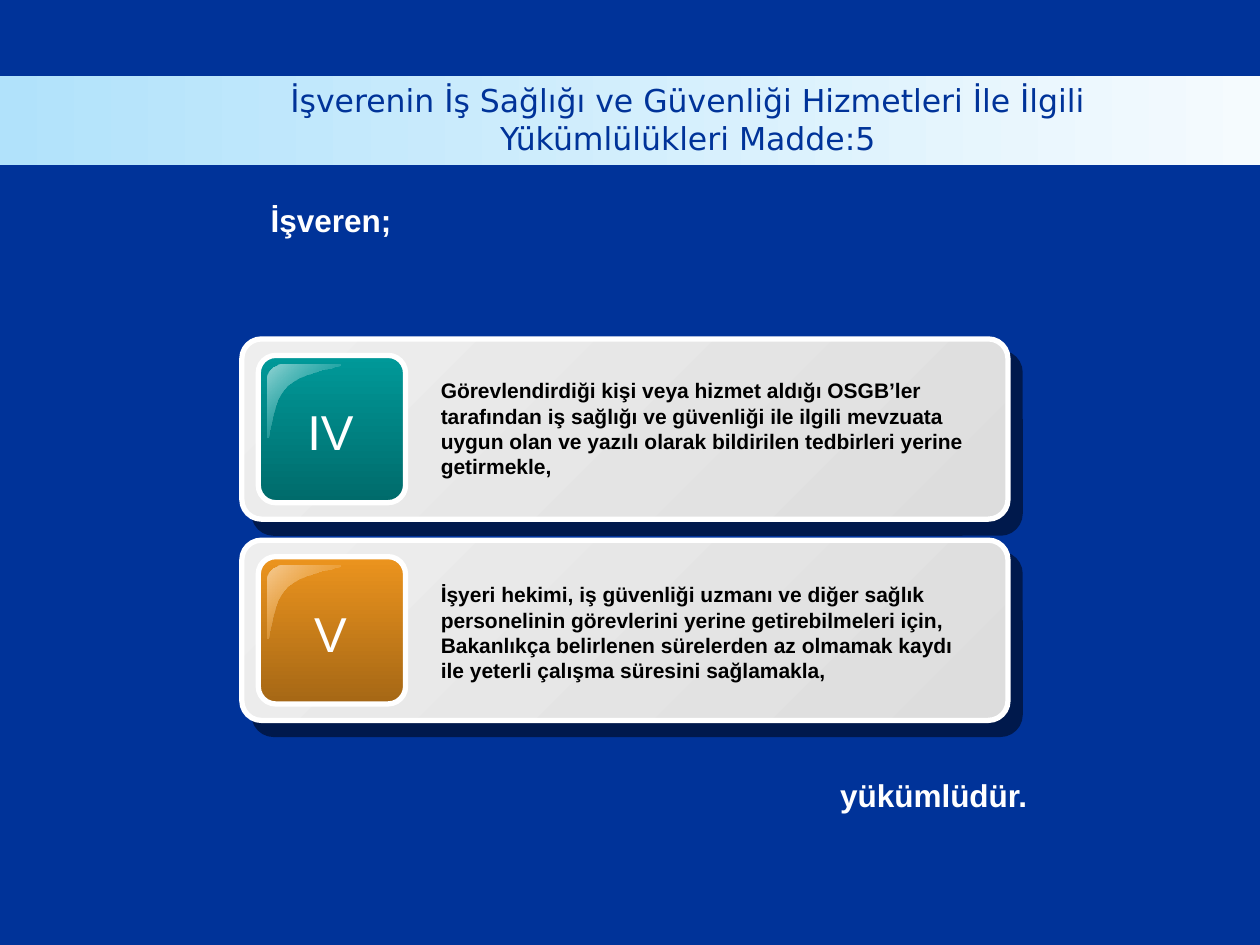
"""Build a slide listing two employer obligations as numbered cards."""
from lxml import etree
from pptx import Presentation, util as u
from pptx.dml.color import RGBColor
from pptx.enum import shapes, text
from pptx.oxml.ns import qn

NAVY = RGBColor(0x00, 0x33, 0x99)
WHITE = RGBColor(0xFF, 0xFF, 0xFF)
BLACK = RGBColor(0x00, 0x00, 0x00)
BAND = RGBColor(0xB1, 0xE2, 0xFB), RGBColor(0xF5, 0xFB, 0xFE)
CARD = RGBColor(0xEE, 0xEE, 0xEE), RGBColor(0xDD, 0xDD, 0xDD)
TEAL = RGBColor(0x00, 0x99, 0x99), RGBColor(0x00, 0x6B, 0x6B)
TEAL_GLOSS = RGBColor(0x93, 0xD4, 0xD4), TEAL[0]
ORANGE = RGBColor(0xEC, 0x94, 0x1E), RGBColor(0xA5, 0x67, 0x15)
ORANGE_GLOSS = RGBColor(0xF6, 0xCB, 0x92), ORANGE[0]

CARD_LEFT, CARD_TOP, CARD_STEP = 138.2, 193.7, 115
GLOSS_CURVES = [
    ((8.6, 0), (4.3, 0), (0, 3.6), (0, 8.6)),
    ((0, 41.8), (2.2, 42.5), (1.4, 21.6), (11.5, 12.2)),
    ((11.5, 12.2), (22.3, 2.9), (42.5, 2.2), (41.8, 0)),
]
ITEMS = [
    ("IV", TEAL, TEAL_GLOSS, 212.4,
     "Görevlendirdiği kişi veya hizmet aldığı OSGB’ler tarafından iş sağlığı ve güvenliği "
     "ile ilgili mevzuata uygun olan ve yazılı olarak bildirilen tedbirleri yerine getirmekle,"),
    ("V", ORANGE, ORANGE_GLOSS, 329,
     "İşyeri hekimi, iş güvenliği uzmanı ve diğer sağlık personelinin görevlerini yerine "
     "getirebilmeleri için, Bakanlıkça belirlenen sürelerden az olmamak kaydı ile yeterli "
     "çalışma süresini sağlamakla,"),
]


def bezier(curve, steps=12):
    """Return points along a cubic curve."""
    weights = [((1 - t) ** 3, 3 * t * (1 - t) ** 2, 3 * t * t * (1 - t), t ** 3)
               for t in (i / steps for i in range(steps + 1))]
    return [tuple(sum(w * p[axis] for w, p in zip(ws, curve)) for axis in (0, 1))
            for ws in weights]


class Deck:
    """Hold the slide and its style and draw each kind of element."""

    font = "Arial"

    def __init__(self, prs):
        self.s = prs.slides.add_slide(prs.slide_layouts[6])
        self.s.background.fill.solid()
        self.s.background.fill.fore_color.rgb = NAVY

    def gradient(self, sp, colors, angle):
        sp.shadow.inherit = False
        sp.fill.gradient()
        sp.fill.gradient_angle = (360 - angle) % 360
        for stop, color in zip(sp.fill.gradient_stops, colors):
            stop.color.rgb = color

    def box(self, x, y, w, h, colors, angle, radius=None):
        kind = shapes.MSO_SHAPE.ROUNDED_RECTANGLE if radius else shapes.MSO_SHAPE.RECTANGLE
        sp = self.s.shapes.add_shape(kind, u.Pt(x), u.Pt(y), u.Pt(w), u.Pt(h))
        self.gradient(sp, colors, angle)
        if radius:
            sp.adjustments[0] = radius
            sp.line.color.rgb = WHITE
            sp.line.width = u.Pt(3)
        else:
            sp.line.fill.background()
        return sp

    def drop_shadow(self, sp):
        effects = sp._element.spPr.find(qn("a:effectLst"))
        shadow = etree.SubElement(effects, qn("a:outerShdw"), dist=str(u.Pt(10.6)),
                                  dir=str(49 * 60000), algn="ctr", rotWithShape="0")
        color = etree.SubElement(shadow, qn("a:srgbClr"), val=str(BLACK))
        etree.SubElement(color, qn("a:alpha"), val="50000")

    def gloss(self, x, y, colors):
        points = [(u.Pt(x + px), u.Pt(y + py))
                  for curve in GLOSS_CURVES for px, py in bezier(curve)]
        builder = self.s.shapes.build_freeform(*points[0])
        builder.add_line_segments(points[1:], close=True)
        sp = builder.convert_to_shape()
        self.gradient(sp, colors, 45)
        sp.line.fill.background()
        last = sp._element.spPr.findall(".//" + qn("a:srgbClr"))[-1]
        etree.SubElement(last, qn("a:alpha"), val="0")

    def label(self, x, y, w, h, words, size, color=WHITE, bold=True, center=False,
              wrap=True, middle=False, font=None):
        tf = self.s.shapes.add_textbox(u.Pt(x), u.Pt(y), u.Pt(w), u.Pt(h)).text_frame
        tf.text = words
        tf.word_wrap = wrap
        if middle:
            tf.vertical_anchor = text.MSO_ANCHOR.MIDDLE
        p = tf.paragraphs[0]
        if center:
            p.alignment = text.PP_ALIGN.CENTER
        r = p.runs[0]
        r.font.name, r.font.size, r.font.bold = font or self.font, u.Pt(size), bold
        r.font.color.rgb = color

    def card(self, y, numeral, colors, gloss):
        x = CARD_LEFT
        self.drop_shadow(self.box(x, y, 437.8, 103, CARD, 45, 0.109))
        self.box(x + 9.4, y + 9.4, 84.2, 84.2, colors, 90, 0.119)
        self.gloss(x + 14.4, y + 14.4, gloss)
        self.label(x + 30.2, y + 32.4, 41, 41, numeral, 28,
                   bold=False, center=True, wrap=False)


def main():
    prs = Presentation()
    prs.slide_width, prs.slide_height = u.Pt(720), u.Pt(540)
    deck = Deck(prs)
    deck.box(0, 43.2, 720, 51.1, BAND, 0)
    for i, (numeral, colors, gloss, text_top, words) in enumerate(ITEMS):
        deck.card(CARD_TOP + i * CARD_STEP, numeral, colors, gloss)
        deck.label(244.8, text_top, 321.8, 65.5, words, 12, BLACK)
    deck.label(147.6, 111.6, 127.4, 28.8, "İşveren;", 18)
    deck.label(156.2, 45.4, 473.8, 44.6,
               "İşverenin İş Sağlığı ve Güvenliği Hizmetleri İle İlgili Yükümlülükleri Madde:5",
               18, NAVY, bold=False, center=True, middle=True, font="DejaVu Sans")
    deck.label(473, 439.9, 122.4, 28.8, "yükümlüdür.", 18)
    prs.save("out.pptx")


if __name__ == "__main__":
    main()
